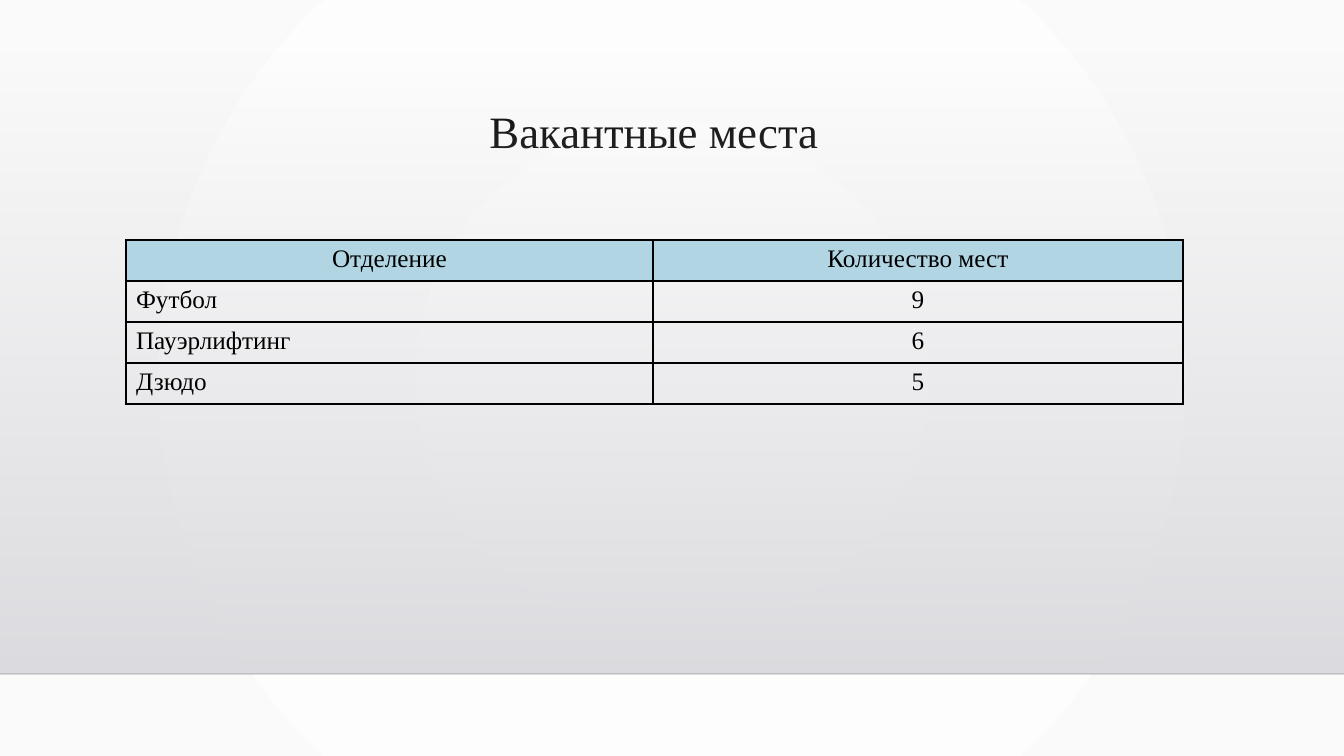
from lxml import etree
from pptx import Presentation
from pptx.dml.color import RGBColor
from pptx.enum.shapes import MSO_CONNECTOR, MSO_SHAPE
from pptx.enum.text import MSO_ANCHOR, PP_ALIGN
from pptx.oxml import parse_xml
from pptx.oxml.ns import qn
from pptx.util import Pt

LEFT, CENTER = PP_ALIGN.LEFT, PP_ALIGN.CENTER
TOP = MSO_ANCHOR.TOP
RECTANGLE = MSO_SHAPE.RECTANGLE
STRAIGHT = MSO_CONNECTOR.STRAIGHT
EMU_PER_PX = 914400 / 100.8
NAMESPACE = "http://schemas.openxmlformats.org/drawingml/2006/main"
FONT = "Times New Roman"
COLOURS = {
    "text": "000000",
    "header": "B2D5E3",
    "centre": "FFFFFF",
    "edge": "FAFAFA",
    "band_top": "DCDCE0",
    "band_bottom": "DADADE",
    "rule": "000001",
}
VACANCIES = [
    ("Отделение", "Количество мест"),
    ("Футбол", "9"),
    ("Пауэрлифтинг", "6"),
    ("Дзюдо", "5"),
]


def px(length):
    """Turn pixels into EMU."""
    return round(length * EMU_PER_PX)


def colour(name):
    """Return the named colour."""
    return RGBColor.from_string(COLOURS[name])


def write(frame, text, size=18, align=LEFT, spacing=1.0):
    """Put one formatted paragraph into a text frame."""
    para = frame.paragraphs[0]
    para.alignment = align
    para.line_spacing = spacing
    span = para.add_run()
    span.text = text
    span.font.name = FONT
    span.font.size = Pt(size)
    span.font.bold = False
    span.font.color.rgb = colour("text")


def set_gradient(properties, stops, direction):
    """Replace a solid fill by a gradient of (position, colour, opacity) stops."""
    stop_xml = "".join(
        f'<a:gs pos="{position * 1000}"><a:srgbClr val="{COLOURS[name]}">'
        f'<a:alpha val="{opacity * 1000}"/></a:srgbClr></a:gs>'
        for position, name, opacity in stops
    )
    gradient = parse_xml(
        f'<a:gradFill xmlns:a="{NAMESPACE}" rotWithShape="1">'
        f"<a:gsLst>{stop_xml}</a:gsLst>{direction}</a:gradFill>"
    )
    properties.replace(properties.find(qn("a:solidFill")), gradient)


def add_backdrop(page, width, height):
    """Draw the radial background, the grey band and its lower rule."""
    page.background.fill.solid()
    page.background.fill.fore_color.rgb = colour("centre")
    radial = (
        '<a:path path="circle">'
        '<a:fillToRect l="50000" t="50000" r="50000" b="50000"/></a:path>'
    )
    background = next(page.element.iter(qn("p:bgPr")))
    set_gradient(background, [(0, "centre", 100), (100, "edge", 100)], radial)

    band_top, band_bottom = 51, height - 82
    band = page.shapes.add_shape(
        RECTANGLE, 0, px(band_top), px(width), px(band_bottom - band_top)
    )
    band.shadow.inherit = False
    band.line.fill.background()
    band.fill.solid()
    set_gradient(
        band.element.spPr,
        [(0, "band_top", 0), (100, "band_bottom", 100)],
        '<a:lin ang="5400000" scaled="0"/>',
    )

    rule = page.shapes.add_connector(
        STRAIGHT, 0, px(band_bottom), px(width), px(band_bottom)
    )
    rule.line.width = Pt(1)
    rule.line.color.rgb = colour("rule")
    tint = next(rule.element.spPr.iter(qn("a:srgbClr")))
    etree.SubElement(tint, qn("a:alpha")).set("val", "20000")
    etree.SubElement(rule.element.spPr, qn("a:effectLst"))


def add_title(page, text, left, top, width, height):
    """Place the slide title in its box."""
    title = page.shapes.title
    title.left, title.top = px(left), px(top)
    title.width, title.height = px(width), px(height)
    title.text_frame.vertical_anchor = TOP
    write(title.text_frame, text, size=32, align=CENTER, spacing=0.9)


def add_borders(cell):
    """Give a cell thin borders on all sides."""
    properties = cell._tc.get_or_add_tcPr()
    for index, side in enumerate(("lnL", "lnR", "lnT", "lnB")):
        border = parse_xml(
            f'<a:{side} xmlns:a="{NAMESPACE}" w="12700"><a:solidFill>'
            f'<a:srgbClr val="{COLOURS["text"]}"/></a:solidFill></a:{side}>'
        )
        properties.insert(index, border)


def add_vacancies(page, rows, left, top, column_widths, row_height):
    """Draw the table of vacancies with a tinted header row."""
    table = page.shapes.add_table(
        len(rows), len(column_widths), px(left), px(top),
        px(sum(column_widths)), px(row_height * len(rows)),
    ).table
    table.first_row = table.horz_banding = False
    for column, width in zip(table.columns, column_widths):
        column.width = px(width)
    for row_index, values in enumerate(rows):
        table.rows[row_index].height = px(row_height)
        for column_index, value in enumerate(values):
            cell = table.cell(row_index, column_index)
            is_header = row_index == 0
            if is_header:
                cell.fill.solid()
                cell.fill.fore_color.rgb = colour("header")
            else:
                cell.fill.background()
            add_borders(cell)
            centred = is_header or column_index > 0
            write(cell.text_frame, value, align=CENTER if centred else LEFT)


def main():
    """Build the deck and save it."""
    width, height = 1344, 756
    deck = Presentation()
    deck.slide_width, deck.slide_height = px(width), px(height)
    page = deck.slides.add_slide(deck.slide_layouts.get_by_name("Title Only"))
    add_backdrop(page, width, height)
    add_title(page, "Вакантные места", 125, 105, 1058, 116)
    add_vacancies(page, VACANCIES, 126, 240, (527, 530), 41)
    deck.save("out.pptx")


if __name__ == "__main__":
    main()
